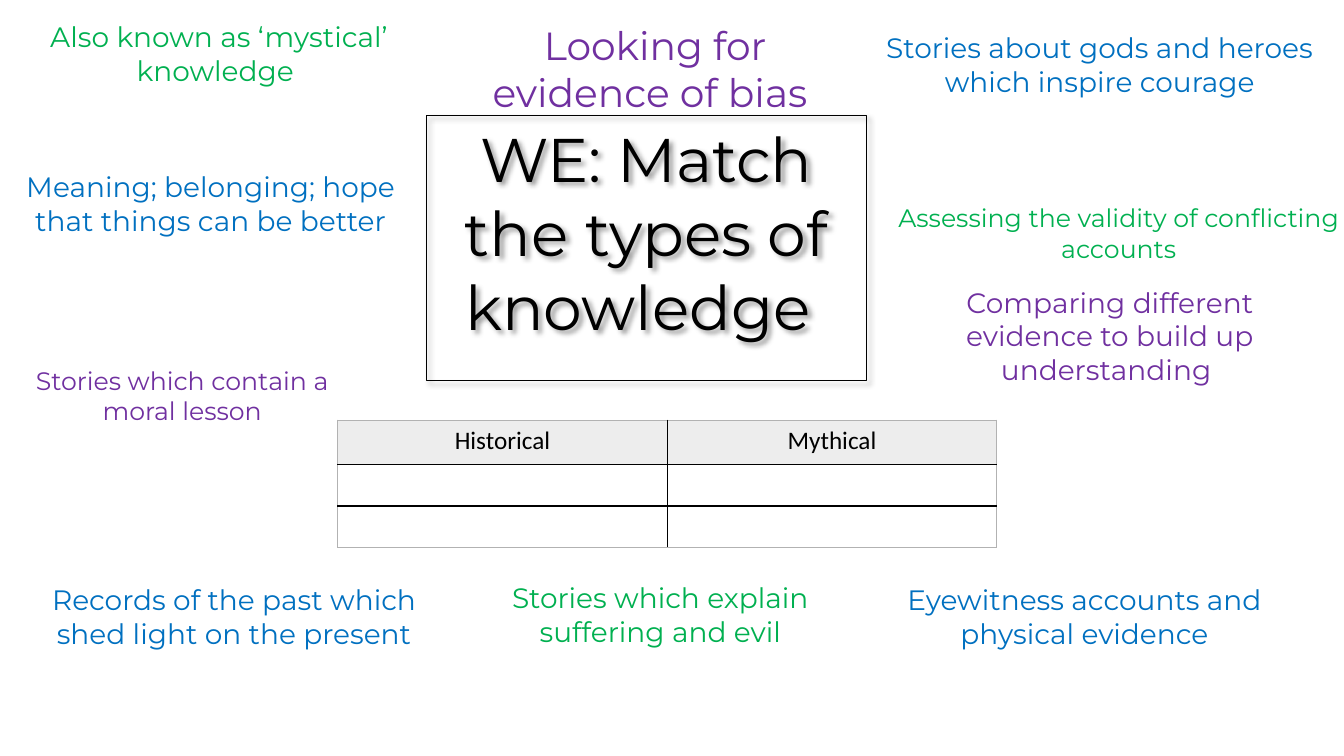
"""Build a matching task on historical and mythical knowledge."""
import pptx
import pptx.dml.color
import pptx.enum.text
import pptx.oxml
import pptx.oxml.ns
import pptx.util

Cm = pptx.util.Cm
Pt = pptx.util.Pt
RGB = pptx.dml.color.RGBColor
BLACK = RGB(0, 0, 0)
WHITE = RGB(255, 255, 255)
GREEN = RGB(0, 176, 80)
BLUE = RGB(0, 112, 192)
PURPLE = RGB(112, 48, 160)
PALE = RGB(237, 237, 237)
GREY = RGB(178, 178, 178)

CLUES = [
    ("Also known as ‘mystical’ knowledge ", 0.3, 0.36, 10.44, 1.96, 20, GREEN),
    ("Stories which explain suffering and evil", 11.33, 14.5, 10.62, 1.96, 20, GREEN),
    ("Meaning; belonging; hope that things can be better", 0, 4.14, 10.62, 1.96, 20, BLUE),
    ("Stories about gods and heroes which inspire courage", 21.77, 0.64, 11.89, 2.82, 20, BLUE),
    ("Records of the past which shed light on the present", 0.3, 14.55, 11.2, 1.96, 20, BLUE),
    ("Eyewitness accounts and physical evidence", 22.02, 14.55, 10.62, 1.96, 20, BLUE),
    ("Assessing the validity of conflicting accounts", 22.25, 4.98, 11.89, 1.8, 18, GREEN),
    ("Stories which contain a moral lesson", 0.2, 9.07, 8.79, 1.8, 18, PURPLE),
    ("Comparing different evidence to build up understanding ", 22.66, 7.06, 10.62, 2.82, 20, PURPLE),
    ("Looking for evidence of bias ", 11.2, 0.41, 10.62, 2.64, 28, PURPLE),
]


class Board:
    """Hold the style and the current slide."""

    font = "Montserrat"
    frame = {
        "word_wrap": True,
        "auto_size": pptx.enum.text.MSO_AUTO_SIZE.NONE,
        "vertical_anchor": pptx.enum.text.MSO_ANCHOR.TOP,
        "margin_left": Cm(0.25),
        "margin_right": Cm(0.25),
        "margin_top": Cm(0.13),
        "margin_bottom": Cm(0.13),
    }

    def __init__(self, deck):
        """Add a slide with a title to the deck."""
        self.slide = deck.slides.add_slide(deck.slide_layouts[5])

    def label(self, frame, text, size, color, font=None):
        """Put one centred line of styled text in a frame."""
        para = frame.paragraphs[0]
        para.alignment = pptx.enum.text.PP_ALIGN.CENTER
        para.line_spacing = 1.0
        run = para.add_run()
        run.text = text
        looks = {"name": font or self.font, "size": Pt(size), "bold": False}
        for key, value in looks.items():
            setattr(run.font, key, value)
        run.font.color.rgb = color

    def fit(self, frame):
        """Apply the common frame settings."""
        for key, value in self.frame.items():
            setattr(frame, key, value)

    def title(self, text, left, top, width, height):
        """Place the outlined title with its soft shadow."""
        box = self.slide.shapes.title
        place = {"left": left, "top": top, "width": width, "height": height}
        for key, value in place.items():
            setattr(box, key, Cm(value))
        box.fill.background()
        box.line.color.rgb = BLACK
        box.line.width = Pt(0.75)
        box._element.spPr.append(pptx.oxml.parse_xml(
            f'<a:effectLst {pptx.oxml.ns.nsdecls("a")}>'
            f'<a:outerShdw blurRad="{Pt(4)}" dist="{Pt(3)}" dir="2700000" '
            'algn="tl" rotWithShape="0"><a:srgbClr val="000000">'
            '<a:alpha val="40000"/></a:srgbClr></a:outerShdw></a:effectLst>'))
        self.fit(box.text_frame)
        self.label(box.text_frame, text, 44, BLACK)

    def clue(self, text, left, top, width, height, size, color):
        """Place one coloured clue."""
        box = self.slide.shapes.add_textbox(Cm(left), Cm(top), Cm(width), Cm(height))
        self.fit(box.text_frame)
        self.label(box.text_frame, text, size, color)

    def edge(self, cell, side, color):
        """Draw one border of a cell."""
        cell._tc.get_or_add_tcPr().append(pptx.oxml.parse_xml(
            f'<a:ln{side} {pptx.oxml.ns.nsdecls("a")} w="{Pt(1)}">'
            f'<a:solidFill><a:srgbClr val="{color}"/></a:solidFill></a:ln{side}>'))

    def table(self, heads, left, top, width, rows):
        """Place the answer table below its heads."""
        count = len(heads)
        grid = self.slide.shapes.add_table(
            len(rows), count, Cm(left), Cm(top), Cm(width), Cm(sum(rows))).table
        for row, height in enumerate(rows):
            grid.rows[row].height = Cm(height)
            for col in range(count):
                cell = grid.cell(row, col)
                outer = {"L": col == 0, "R": col == count - 1,
                         "T": row == 0, "B": row == len(rows) - 1}
                for side, rim in outer.items():
                    self.edge(cell, side, GREY if rim else BLACK)
                cell.fill.solid()
                cell.fill.fore_color.rgb = WHITE if row else PALE
        for col, head in enumerate(heads):
            self.label(grid.cell(0, col).text_frame, head, 18, BLACK, "Calibri")


def main():
    """Build and save the slide."""
    deck = pptx.Presentation()
    deck.slide_width, deck.slide_height = Cm(33.87), Cm(19.05)
    board = Board(deck)
    board.title("WE: Match the types of knowledge ", 10.74, 2.92, 11.1, 6.68)
    for clue in CLUES:
        board.clue(*clue)
    board.table(["Historical", "Mythical"], 8.51, 10.59, 16.61, [1.12, 1.04, 1.04])
    deck.save("out.pptx")


if __name__ == "__main__":
    main()
